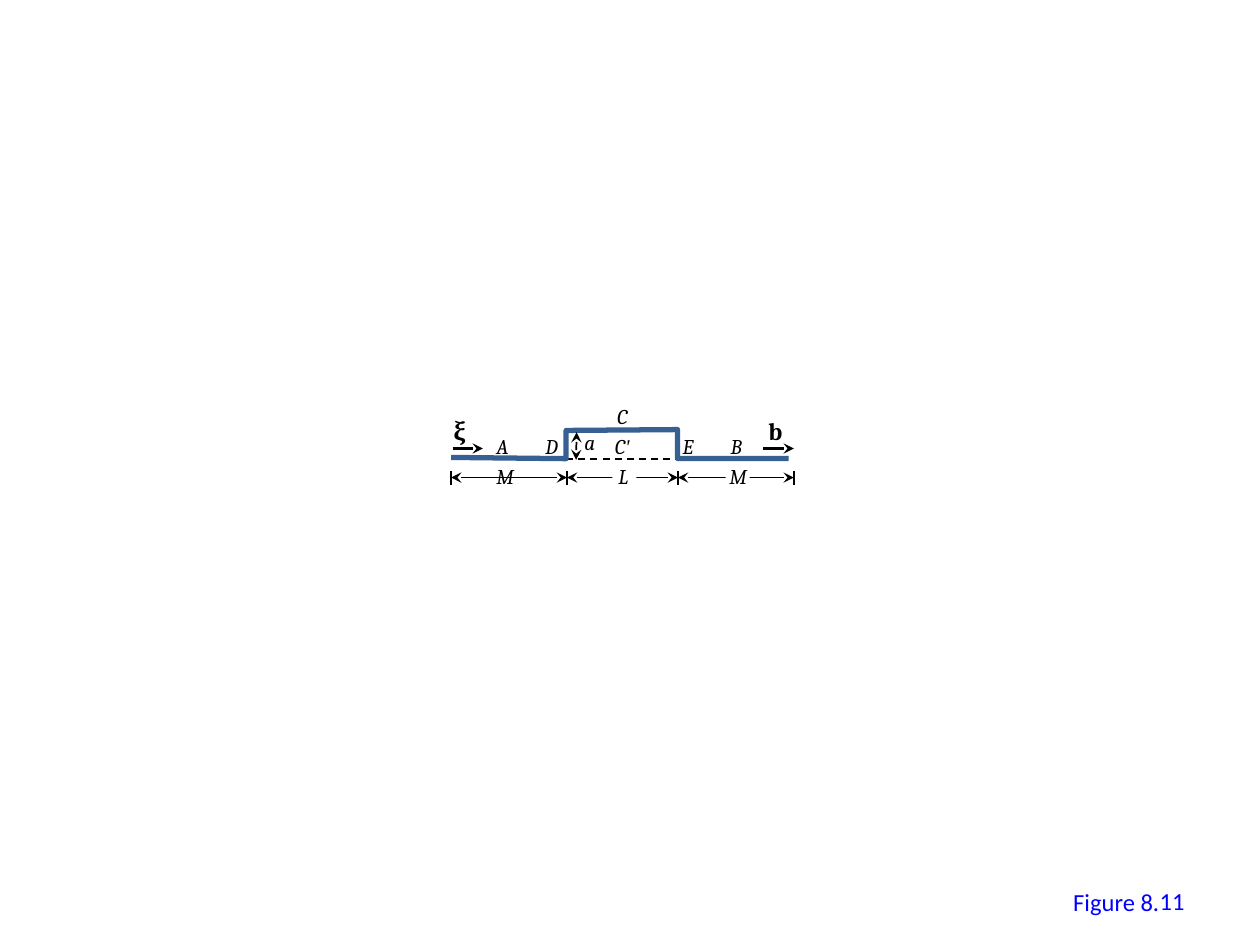
import pptx
import pptx.util
import pptx.dml.color
import pptx.enum.dml
import pptx.enum.shapes
import pptx.enum.text
import pptx.oxml
import pptx.oxml.ns
from pptx.util import Pt

BLACK, WHITE, BLUE, STEEL = "000000", "FFFFFF", "0000FF", "376092"

# Wire outline and the marks that divide the dimension line
WIRE = [(257.8, 261.4), (323.5, 262.1), (323.5, 246), (387.2, 245.5),
        (387.2, 262), (450.7, 262)]
MARKS = [257.8, 324, 387.4, 453.6]
DIMENSION_Y, MARK_TOP, MARK_BOTTOM = 272.9, 269.3, 277.2
VECTOR_Y, VECTOR_STARTS, VECTOR_LENGTH = 256.3, [258.6, 436.3], 17.3

# Labels: text, left, width; each row shares a top
LABEL_HEIGHT = 21.8
DIMENSION_LABELS = [("M", 276.5, 28.1), ("L", 346.3, 24.5), ("M", 409.7, 28.1)]
DIMENSION_LABEL_TOP = 261.4
LABEL_GAPS = [(349.9, 13.7), (414.7, 13.7)]
POINT_LABELS = [
    (244.1, [("A", 276.5, 25.2), ("D", 304.6, 26.6), ("E", 383, 25.2), ("B", 410.4, 25.2)]),
    (241.9, [("a", 326.9, 23.8)]),
    (226.8, [("C", 345.6, 25.9)]),
]
VECTOR_LABELS = [("ξ", 252, 21.6), ("b", 432, 22.3)]


def rgb(value):
    return pptx.dml.color.RGBColor.from_string(value)


def add_text(text, left, top, width, height, font="Cambria", size=12, color=BLACK,
             bold=None, italic=None, align=None, anchor=None, wrap=False):
    box = page.shapes.add_textbox(Pt(left), Pt(top), Pt(width), Pt(height))
    frame = box.text_frame
    frame.word_wrap = wrap
    if anchor is not None:
        frame.vertical_anchor = anchor
    para = frame.paragraphs[0]
    if align is not None:
        para.alignment = align
    # A plain string is one span; a list holds (text, font) spans
    for words, face in [(text, font)] if isinstance(text, str) else text:
        span = para.add_run()
        span.text = words
        span.font.name, span.font.size = face, Pt(size)
        span.font.bold, span.font.italic = bold, italic
        span.font.color.rgb = rgb(color)


def add_line(x1, y1, x2, y2, width=1, dash=None, arrows=()):
    line = page.shapes.add_connector(pptx.enum.shapes.MSO_CONNECTOR.STRAIGHT,
                                     Pt(x1), Pt(y1), Pt(x2), Pt(y2))
    line.line.color.rgb = rgb(BLACK)
    line.line.width = Pt(width)
    if dash is not None:
        line.line.dash_style = dash
    outline = line.line._get_or_add_ln()
    for end in arrows:
        arrow = pptx.oxml.parse_xml(f'<a:{end} {pptx.oxml.ns.nsdecls("a")} type="stealth"/>')
        outline.append(arrow)
    line._element.spPr.append(
        pptx.oxml.parse_xml(f'<a:effectLst {pptx.oxml.ns.nsdecls("a")}/>'))


deck = pptx.Presentation()
deck.slide_width, deck.slide_height = Pt(720), Pt(540)
page = deck.slides.add_slide(deck.slide_layouts[6])
BOTH_ENDS = ("headEnd", "tailEnd")

# Dashed base line and wire
add_line(323.5, 262.1, 387.2, 262.1, dash=pptx.enum.dml.MSO_LINE.DASH)
builder = page.shapes.build_freeform(Pt(WIRE[0][0]), Pt(WIRE[0][1]), scale=1.0)
builder.add_line_segments([(Pt(x), Pt(y)) for x, y in WIRE[1:]], close=False)
wire = builder.convert_to_shape()
wire.shadow.inherit = False
wire.fill.background()
wire.line.color.rgb = rgb(STEEL)
wire.line.width = Pt(3)

# Dimension, vector and height arrows
for start, end in zip(MARKS, MARKS[1:]):
    add_line(start, DIMENSION_Y, end, DIMENSION_Y, arrows=BOTH_ENDS)
for start in VECTOR_STARTS:
    add_line(start, VECTOR_Y, start + VECTOR_LENGTH, VECTOR_Y, width=1.5, arrows=("tailEnd",))
add_line(329.2, 262.8, 329.5, 247, arrows=BOTH_ENDS)

# White gaps behind dimension labels
for left, width in LABEL_GAPS:
    gap = page.shapes.add_shape(pptx.enum.shapes.MSO_SHAPE.RECTANGLE,
                                Pt(left), Pt(269), Pt(width), Pt(10.8))
    gap.shadow.inherit = False
    gap.fill.solid()
    gap.fill.fore_color.rgb = rgb(WHITE)
    gap.line.fill.background()

# Labels
for top, labels in [(DIMENSION_LABEL_TOP, DIMENSION_LABELS)] + POINT_LABELS:
    for text, left, width in labels:
        add_text(text, left, top, width, LABEL_HEIGHT, italic=True)
add_text([("C", "Cambria"), ("'", "Times New Roman")], 344.2, 244.1, 29.5, LABEL_HEIGHT,
         italic=True)
for text, left, width in VECTOR_LABELS:
    add_text(text, left, 234, width, 24.5, size=14, bold=True)

# End marks of the dimension line
for x in MARKS:
    add_line(x, MARK_BOTTOM, x, MARK_TOP)

# Figure number
add_text("Figure 8.", 606.2, 503.3, 64.1, 24.5, font="Calibri", size=14, color=BLUE)
add_text("11", 516.2, 500.4, 167.8, 28.8, font="Calibri", size=14, color=BLUE, wrap=True,
         align=pptx.enum.text.PP_ALIGN.RIGHT, anchor=pptx.enum.text.MSO_ANCHOR.MIDDLE)

deck.save("out.pptx")
